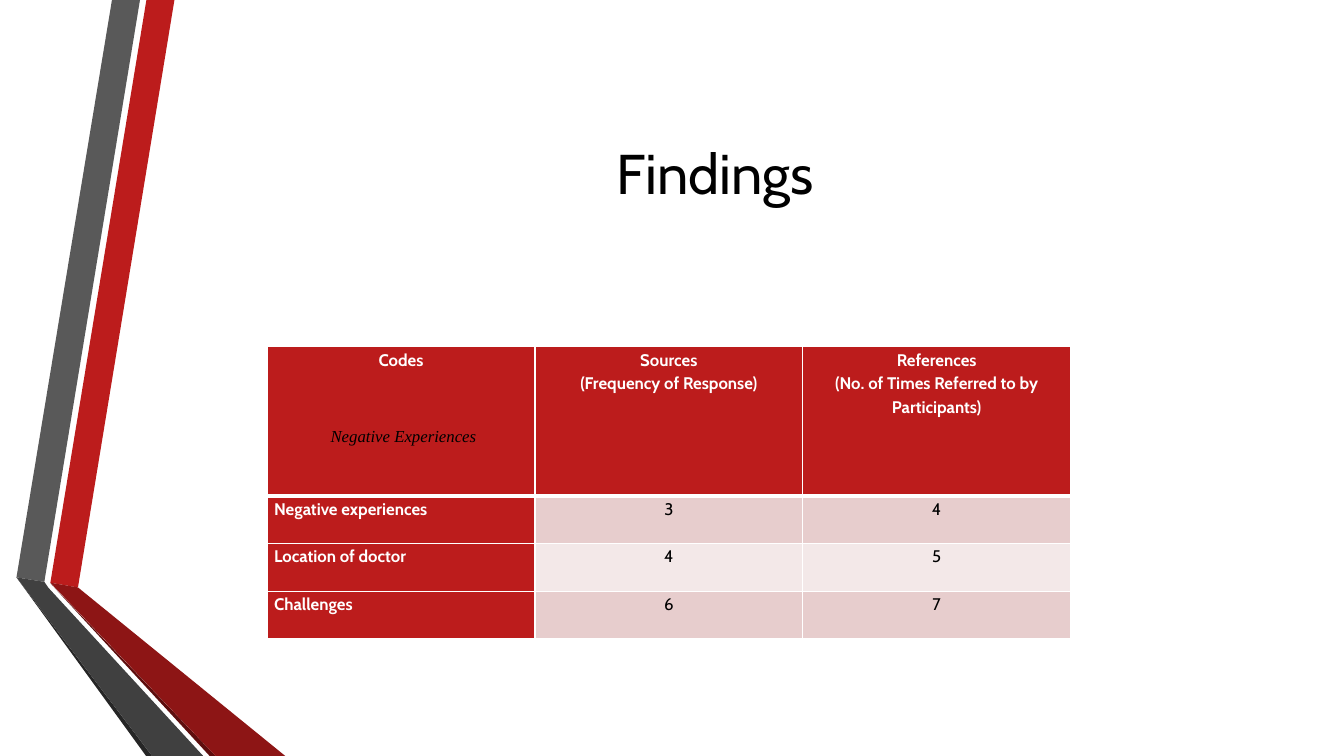
import pptx
import pptx.dml.color
import pptx.enum.text
import pptx.oxml
import pptx.oxml.ns
import pptx.util

Pt = pptx.util.Pt
RGB = pptx.dml.color.RGBColor
ALIGN = pptx.enum.text.PP_ALIGN
ANCHOR = pptx.enum.text.MSO_ANCHOR

BLACK = RGB(0x00, 0x00, 0x00)
WHITE = RGB(0xFF, 0xFF, 0xFF)
RED = RGB(0xBC, 0x1C, 0x1C)
DARK_RED = RGB(0x8D, 0x15, 0x15)
DEEP_RED = RGB(0x5E, 0x0E, 0x0E)
GRAY = RGB(0x59, 0x59, 0x59)
DARK_GRAY = RGB(0x40, 0x40, 0x40)
DEEP_GRAY = RGB(0x26, 0x26, 0x26)
BANDS = (RGB(0xE7, 0xCD, 0xCD), RGB(0xF3, 0xE8, 0xE8))

RIBBONS = [
    (RED, [(36, 416.2), (55.7, 419.6), (124.6, 0), (104.6, 0)]),
    (GRAY, [(100, 0), (80, 0), (11.8, 412.4), (31.7, 415.6)]),
    (DEEP_GRAY, [(11.8, 412.4), (104.4, 540), (108.7, 540)]),
    (DEEP_RED, [(36, 416.6), (149.8, 540), (154.1, 540)]),
    (DARK_RED, [(36, 416.2), (154.1, 540), (203.8, 540), (55.7, 419.6)]),
    (DARK_GRAY, [(145.2, 540), (34.6, 419.8), (31.7, 415.6),
                 (11.8, 412.4), (108.7, 540)]),
]

ROWS = [
    ("Codes", "Sources\n(Frequency of Response)",
     "References\n(No. of Times Referred to by Participants)"),
    ("Negative experiences", "3", "4"),
    ("Location of doctor", "4", "5"),
    ("Challenges", "6", "7"),
]


def write(frame, text, font="Cabin", size=12, color=BLACK, bold=False,
          italic=False, align=ALIGN.LEFT, gap=None):
    """Fill a text frame, one paragraph for each line of text."""
    frame.text = text
    for para in frame.paragraphs:
        para.alignment = align
        para.line_spacing = gap
        for run in para.runs:
            run.font.name = font
            run.font.size = Pt(size)
            run.font.bold = bold
            run.font.italic = italic
            run.font.color.rgb = color


def edge(cell, side, width):
    """Draw one white border; sides go in the order L, R, T, B."""
    props = cell._tc.get_or_add_tcPr()
    props.append(pptx.oxml.parse_xml(
        f'<a:ln{side} {pptx.oxml.ns.nsdecls("a")} w="{Pt(width)}">'
        f'<a:solidFill><a:srgbClr val="{WHITE}"/></a:solidFill></a:ln{side}>'))


class Page:
    def __init__(self, deck):
        self.slide = deck.slides.add_slide(deck.slide_layouts[5])
        self.shapes = self.slide.shapes

    def ribbon(self, color, points):
        start, *rest = [(Pt(x), Pt(y)) for x, y in points]
        pen = self.shapes.build_freeform(*start)
        pen.add_line_segments(rest)
        shape = pen.convert_to_shape()
        shape.shadow.inherit = False
        shape.fill.solid()
        shape.fill.fore_color.rgb = color
        shape.line.fill.background()

    def title(self, text, left, top, width, height):
        box = self.shapes.title
        box.left, box.top = Pt(left), Pt(top)
        box.width, box.height = Pt(width), Pt(height)
        box.text_frame.vertical_anchor = ANCHOR.MIDDLE
        write(box.text_frame, text, size=40, align=ALIGN.CENTER)

    def table(self, rows, left, top, width, heights):
        count = len(rows[0])
        grid = self.shapes.add_table(len(rows), count, Pt(left), Pt(top),
                                     Pt(width), Pt(sum(heights))).table
        for col in grid.columns:
            col.width = Pt(width / count)
        for i, (row, height) in enumerate(zip(rows, heights)):
            grid.rows[i].height = Pt(height)
            for j, text in enumerate(row):
                self.cell(grid.cell(i, j), text, i, j)

    def cell(self, cell, text, i, j):
        head = i == 0 or j == 0
        cell.margin_left = cell.margin_right = Pt(5)
        cell.margin_top = cell.margin_bottom = 0
        edges = {"L": 1, "R": 1, "T": 3 if i == 1 else 1,
                 "B": 3 if i == 0 else 1}
        for side, width in edges.items():
            edge(cell, side, width)
        cell.fill.solid()
        cell.fill.fore_color.rgb = RED if head else BANDS[(i - 1) % 2]
        write(cell.text_frame, text, color=WHITE if head else BLACK, bold=head,
              align=ALIGN.LEFT if i and j == 0 else ALIGN.CENTER, gap=1.15)

    def label(self, text, left, top, width, height, **style):
        box = self.shapes.add_textbox(Pt(left), Pt(top), Pt(width), Pt(height))
        box.text_frame.word_wrap = True
        box.text_frame.vertical_anchor = ANCHOR.MIDDLE
        write(box.text_frame, text, **style)


def main():
    deck = pptx.Presentation()
    deck.slide_width, deck.slide_height = Pt(960), Pt(540)
    page = Page(deck)
    for color, points in RIBBONS:
        page.ribbon(color, points)
    page.title("Findings", 116.6, 54, 789, 138.2)
    page.table(ROWS, 190.8, 247.7, 574, [106.6, 34, 34, 34])
    page.label("Negative Experiences", 229, 300.2, 140, 21.8,
               font="Times New Roman", italic=True)
    deck.save("out.pptx")


if __name__ == "__main__":
    main()
